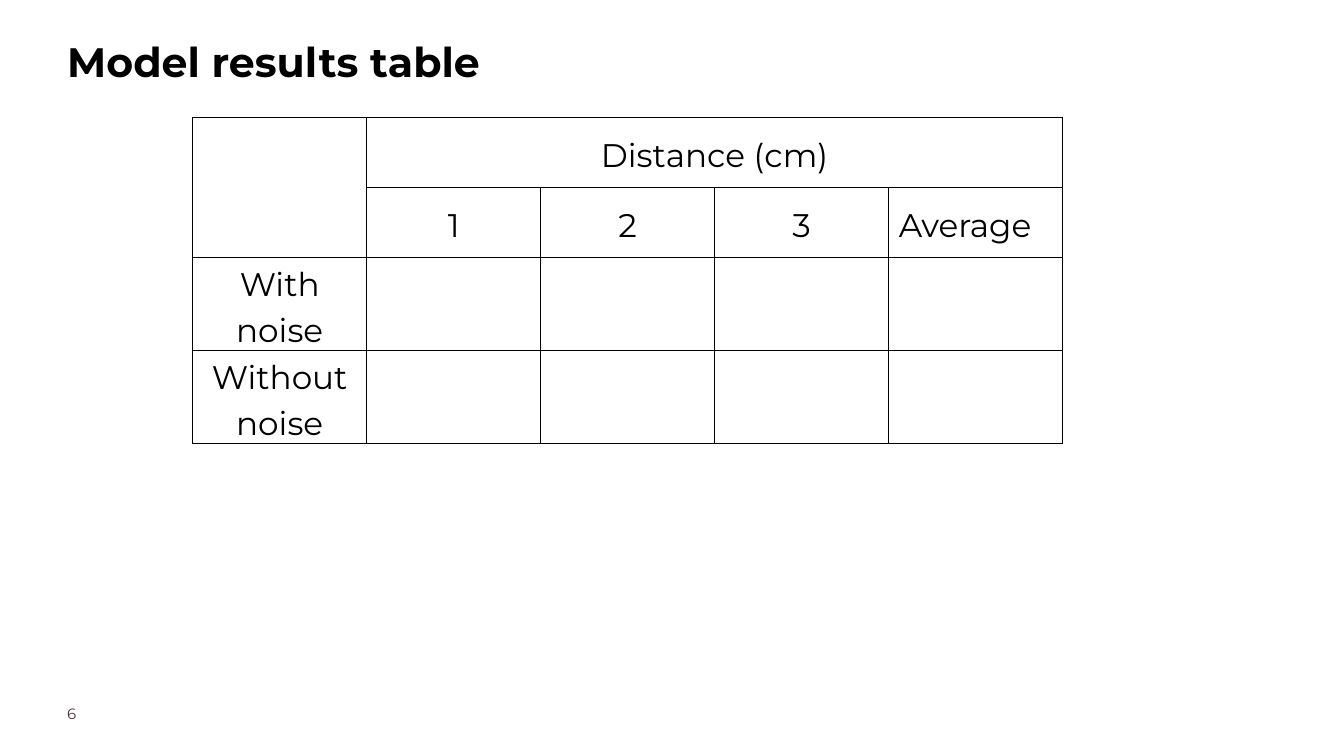
from dataclasses import dataclass
from typing import Any

from lxml.etree import SubElement
from pptx import Presentation
from pptx.dml.color import RGBColor as Rgb
from pptx.enum.text import MSO_ANCHOR as Anchor, PP_ALIGN as Align
from pptx.oxml.ns import qn
from pptx.util import Pt

COLORS = {"ink": "000000", "page_number": "4B3241"}


@dataclass
class SlideBuilder:
    slide: Any
    font: str = "Montserrat"
    line_spacing: float = 1.15
    cell_size: float = 35
    border_width: float = 0.75

    def add_text_run(self, paragraph, text, size, color="ink", bold=False):
        run = paragraph.add_run()
        run.text = text
        run.font.name = self.font
        run.font.size = Pt(size)
        run.font.bold = bold
        run.font.color.rgb = Rgb.from_string(COLORS[color])

    def text(self, left, top, width, height, text, size, color="ink", bold=False, spacing=None):
        frame = self.slide.shapes.add_textbox(Pt(left), Pt(top), Pt(width), Pt(height)).text_frame
        frame.word_wrap = True
        frame.margin_left = frame.margin_right = frame.margin_top = frame.margin_bottom = 0
        frame.paragraphs[0].line_spacing = spacing
        self.add_text_run(frame.paragraphs[0], text, size, color, bold)

    def border(self, cell):
        properties = cell._tc.get_or_add_tcPr()
        for side in ("lnL", "lnR", "lnT", "lnB"):
            line = SubElement(properties, qn(f"a:{side}"), w=str(Pt(self.border_width)))
            fill = SubElement(line, qn("a:solidFill"))
            SubElement(fill, qn("a:srgbClr"), val=COLORS["ink"])

    def table(self, left, top, column_width, row_heights, labels, merges):
        columns = len(labels[0])
        table = self.slide.shapes.add_table(
            len(labels), columns, Pt(left), Pt(top),
            Pt(column_width * columns), Pt(sum(row_heights))).table
        table.first_row = table.horz_banding = False
        for column in table.columns:
            column.width = Pt(column_width)
        for row, height in zip(table.rows, row_heights):
            row.height = Pt(height)
        for start, end in merges:
            table.cell(*start).merge(table.cell(*end))
        for r, row_labels in enumerate(labels):
            for c, label in enumerate(row_labels):
                cell = table.cell(r, c)
                self.border(cell)
                cell.fill.background()
                if label:
                    self.label(cell, label)
        return table

    def label(self, cell, text):
        cell.vertical_anchor = Anchor.MIDDLE
        cell.margin_left = cell.margin_right = Pt(2)
        cell.margin_top = cell.margin_bottom = Pt(1.5)
        paragraph = cell.text_frame.paragraphs[0]
        paragraph.alignment = Align.CENTER
        paragraph.line_spacing = self.line_spacing
        self.add_text_run(paragraph, text, self.cell_size)


def main():
    deck = Presentation()
    deck.slide_width, deck.slide_height = Pt(1440), Pt(810)
    builder = SlideBuilder(deck.slides.add_slide(deck.slide_layouts[6]))

    builder.text(72, 754.5, 113, 28, "6", 16, "page_number")
    builder.text(72, 31, 622, 128, "Model results table", 44, bold=True,
                 spacing=builder.line_spacing)

    results = builder.table(
        206.5, 126, 186.4, [75, 75, 90, 90],
        [["", "Distance (cm)", "", "", ""],
         ["", "1", "2", "3", "Average"],
         ["With noise", "", "", "", ""],
         ["Without noise", "", "", "", ""]],
        [((0, 0), (1, 0)), ((0, 1), (0, 4))])
    average = results.cell(1, 4)
    average.margin_left = Pt(11)
    average.text_frame.paragraphs[0].alignment = Align.LEFT

    deck.save("out.pptx")


if __name__ == "__main__":
    main()
